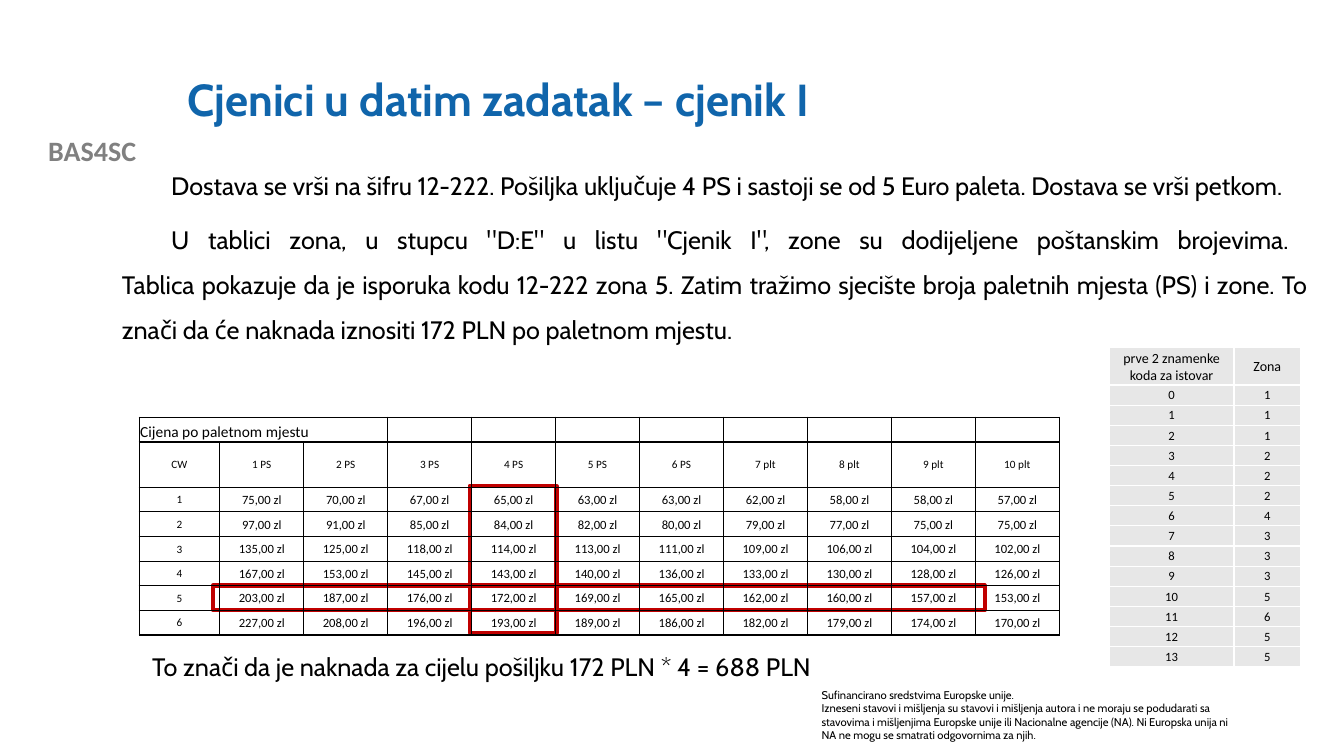
from lxml import etree
from pptx import Presentation
from pptx.dml.color import RGBColor
from pptx.enum.shapes import MSO_SHAPE
from pptx.enum.text import MSO_ANCHOR, PP_ALIGN
from pptx.oxml import parse_xml
from pptx.oxml.ns import nsdecls, qn
from pptx.util import Inches, Pt

RECT = MSO_SHAPE.RECTANGLE
TOP, MIDDLE, BOTTOM = MSO_ANCHOR.TOP, MSO_ANCHOR.MIDDLE, MSO_ANCHOR.BOTTOM
LEFT, CENTER, JUSTIFY = PP_ALIGN.LEFT, PP_ALIGN.CENTER, PP_ALIGN.JUSTIFY

COLORS = {"ink": "000000", "title": "1065AB", "gray": "808080",
          "mark": "C00000", "zone": "E7E7E7", "white": "FFFFFF"}

BODY = [
    "Dostava se vrši na šifru 12-222. Pošiljka uključuje 4 PS i sastoji se od "
    "5 Euro paleta. Dostava se vrši petkom.",
    "U tablici zona, u stupcu \"D:E\" u listu \"Cjenik I\", zone su dodijeljene "
    "poštanskim brojevima. \vTablica pokazuje da je isporuka kodu 12-222 zona 5. "
    "Zatim tražimo sjecište broja paletnih mjesta (PS) i zone. To znači da će "
    "naknada iznositi 172 PLN po paletnom mjestu.",
]
TOTAL = ["To znači da je naknada za cijelu pošiljku 172 PLN * 4 = 688 PLN"]
FUNDING = [
    "Sufinancirano sredstvima Europske unije.",
    "Izneseni stavovi i mišljenja su stavovi i mišljenja autora i ne moraju se "
    "podudarati sa stavovima i mišljenjima Europske unije ili Nacionalne agencije "
    "(NA). Ni Europska unija ni NA ne mogu se smatrati odgovornima za njih.",
]
PRICES = [
    [75, 70, 67, 65, 63, 63, 62, 58, 58, 57],
    [97, 91, 85, 84, 82, 80, 79, 77, 75, 75],
    [135, 125, 118, 114, 113, 111, 109, 106, 104, 102],
    [167, 153, 145, 143, 140, 136, 133, 130, 128, 126],
    [203, 187, 176, 172, 169, 165, 162, 160, 157, 153],
    [227, 208, 196, 193, 189, 186, 182, 179, 174, 170],
]
ZONES = [1, 1, 1, 2, 2, 2, 4, 3, 3, 3, 5, 6, 5, 5]


def paint(name):
    """Return the named colour."""
    return RGBColor.from_string(COLORS[name])


def style(para, size, font="Cabin", color="ink", bold=False, align=LEFT):
    """Set the font and alignment of one paragraph."""
    para.alignment = align
    para.font.size = Pt(size)
    para.font.name = font
    para.font.bold = bold
    para.font.color.rgb = paint(color)


def add_text(slide, box, lines, size, anchor=TOP, **look):
    """Add a wrapping text box and return its paragraphs."""
    frame = slide.shapes.add_textbox(*map(Inches, box)).text_frame
    frame.word_wrap = True
    frame.vertical_anchor = anchor
    for i, line in enumerate(lines):
        para = frame.add_paragraph() if i else frame.paragraphs[0]
        para.text = line
        style(para, size, **look)
    return frame.paragraphs


def add_body(slide, box, lines):
    """Add justified text with indented first lines."""
    for para in add_text(slide, box, lines, 18, align=JUSTIFY):
        para.line_spacing = 1.5
        para.space_after = Pt(6)
        props = para._p.get_or_add_pPr()
        props.set("marL", "0")
        props.set("indent", str(Inches(0.49)))


def add_mark(slide, box):
    """Add a hollow red frame."""
    mark = slide.shapes.add_shape(RECT, *map(Inches, box))
    mark.shadow.inherit = False
    mark.fill.background()
    mark.line.color.rgb = paint("mark")
    mark.line.width = Pt(3)


def fill_cell(cell, text, size, edge, back=None, align=CENTER, anchor=MIDDLE):
    """Write one table cell and draw its four borders."""
    cell.margin_left = cell.margin_right = cell.margin_top = Inches(0.01)
    cell.margin_bottom = 0
    cell.vertical_anchor = anchor
    cell.text = text
    para = cell.text_frame.paragraphs[0]
    style(para, size, font="Calibri", align=align)
    if not text:
        end = etree.SubElement(para._p, qn("a:endParaRPr"))
        end.set("sz", str(size * 100))
    props = cell._tc.get_or_add_tcPr()
    for side in "LRTB":
        props.append(parse_xml(
            f'<a:ln{side} {nsdecls("a")} w="12700"><a:solidFill>'
            f'<a:srgbClr val="{COLORS[edge]}"/></a:solidFill></a:ln{side}>'))
    if back:
        cell.fill.solid()
        cell.fill.fore_color.rgb = paint(back)
    else:
        cell.fill.background()


def add_grid(slide, box, cols, rows):
    """Add a plain table with the given column widths and row heights."""
    shape = slide.shapes.add_table(len(rows), len(cols), *map(Inches, box))
    table = shape.table
    table.first_row = table.horz_banding = False
    for col, width in zip(table.columns, cols):
        col.width = Inches(width)
    for row, height in zip(table.rows, rows):
        row.height = Inches(height)
    return table


def add_prices(slide, box):
    """Add the price table by zone and number of pallet places."""
    wide, high = box[2:]
    first, head = 0.8, 0.45
    step = (high - head) / 7
    table = add_grid(slide, box, [first] + [(wide - first) / 10] * 10,
                     [step, head] + [step] * 6)
    units = [f"{n} {'PS' if n < 7 else 'plt'}" for n in range(1, 11)]
    data = [["Cijena po paletnom mjestu"] + [""] * 10, ["CW"] + units]
    data += [[str(n)] + [f"{price},00 zl" for price in row]
             for n, row in enumerate(PRICES, 1)]
    for r, row in enumerate(data):
        for c, text in enumerate(row):
            size = 11 if r == 0 else 8 if r == 1 or c == 0 else 9
            align, anchor = (LEFT, BOTTOM) if r == 0 else (CENTER, MIDDLE)
            fill_cell(table.cell(r, c), text, size, "ink",
                      align=align, anchor=anchor)
    table.cell(0, 0).merge(table.cell(0, 2))


def add_zones(slide, box):
    """Add the table of zones by code prefix."""
    wide, high = box[2:]
    code, head = 1.24, 0.37
    table = add_grid(slide, box, [code, wide - code],
                     [head] + [(high - head) / len(ZONES)] * len(ZONES))
    data = [("prve 2 znamenke koda za istovar", "Zona"), *enumerate(ZONES)]
    for r, row in enumerate(data):
        for c, text in enumerate(row):
            fill_cell(table.cell(r, c), str(text), 9 if r else 10,
                      "white", "zone")


def add_title(slide, box):
    """Add the slide heading."""
    para, = add_text(slide, box, ["Cjenici u datim zadatak – cjenik I"], 32,
                     anchor=MIDDLE, color="title", bold=True)
    para.line_spacing = 0.9


def main():
    """Build and save the slide."""
    deck = Presentation()
    deck.slide_width, deck.slide_height = Inches(13.33), Inches(7.5)
    slide = deck.slides.add_slide(deck.slide_layouts[6])
    add_text(slide, (0, 1.28, 1.83, 0.44), ["BAS4SC"], 20,
             font="Calibri", color="gray", bold=True, align=CENTER)
    add_text(slide, (8.05, 6.78, 4.37, 0.64), FUNDING, 8)
    add_title(slide, (1.76, 0.4, 10.66, 1.22))
    add_body(slide, (1.11, 1.49, 11.96, 2.4), BODY)
    add_mark(slide, (2.11, 5.81, 7.66, 0.24))
    add_mark(slide, (4.66, 4.82, 0.86, 1.46))
    add_body(slide, (0.92, 6.26, 9.28, 0.49), TOTAL)
    add_prices(slide, (1.38, 4.14, 9.13, 2.16))
    add_zones(slide, (11, 3.45, 1.9, 3.17))
    deck.save("out.pptx")


if __name__ == "__main__":
    main()
